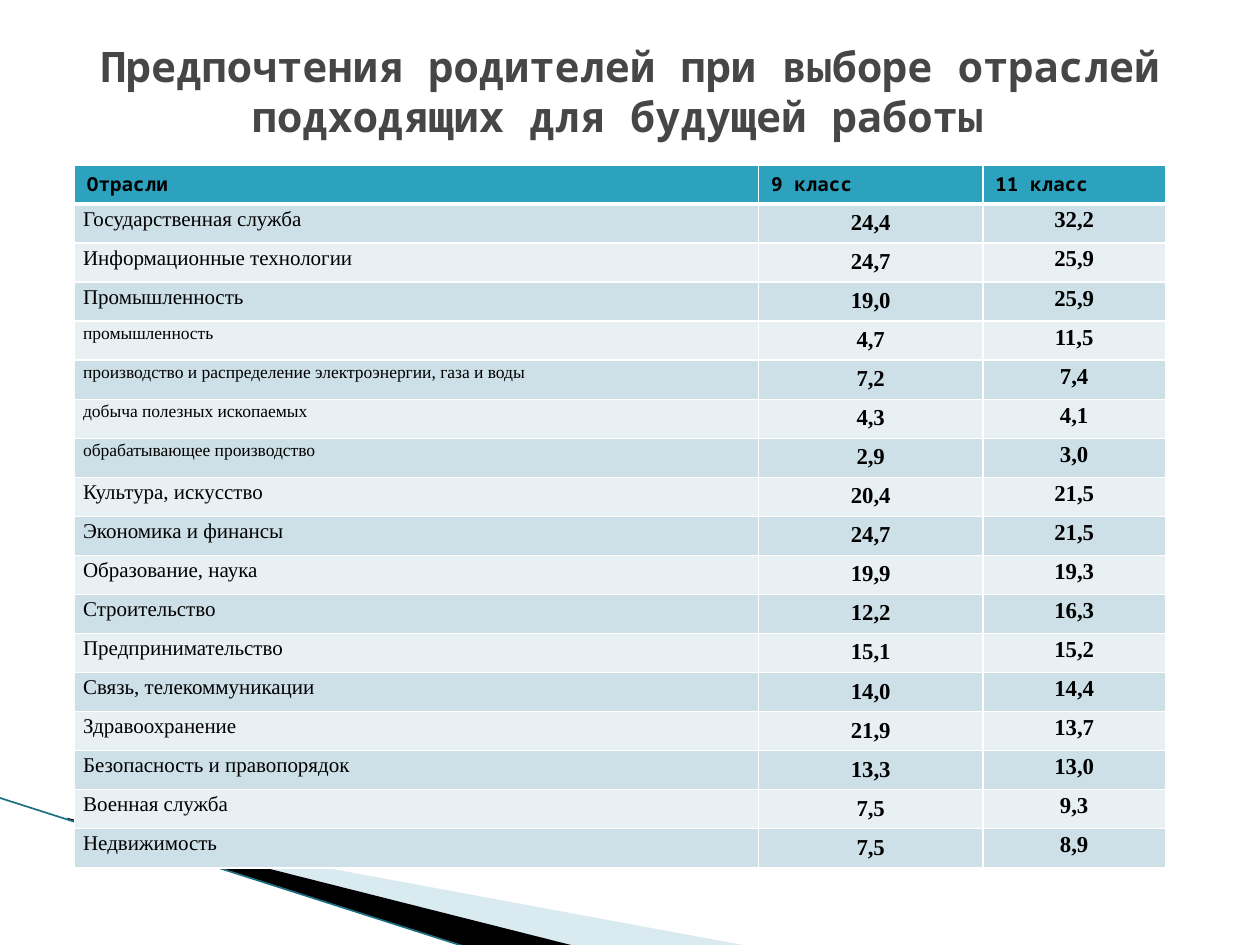
from lxml import etree
from pptx import Presentation
from pptx.dml.color import RGBColor
from pptx.enum.shapes import MSO_CONNECTOR
from pptx.enum.text import MSO_ANCHOR, PP_ALIGN
from pptx.oxml.ns import qn
from pptx.util import Inches, Pt

CENTER, JUSTIFY, LEFT = PP_ALIGN.CENTER, PP_ALIGN.JUSTIFY, PP_ALIGN.LEFT
MIDDLE = MSO_ANCHOR.MIDDLE
STRAIGHT = MSO_CONNECTOR.STRAIGHT

COLORS = {
    "title": "464646", "text": "000000", "header": "2DA2BF",
    "odd": "CDE0E8", "even": "E8F0F4", "border": "FFFFFF",
    "pale": "A0CBDC", "black": "000000", "line": "1B6F83",
}
MONO, SERIF = "Noto Sans Mono", "Times New Roman"

TITLE = "Предпочтения родителей при выборе отраслей подходящих для будущей работы "
HEADER = ("Отрасли", "9 класс", "11 класс")
ROWS = [
    ("Государственная служба", "24,4", "32,2"),
    ("Информационные технологии", "24,7", "25,9"),
    ("Промышленность", "19,0", "25,9"),
    ("промышленность", "4,7", "11,5"),
    ("производство и распределение электроэнергии, газа и воды", "7,2", "7,4"),
    ("добыча полезных ископаемых", "4,3", "4,1"),
    ("обрабатывающее производство", "2,9", "3,0"),
    ("Культура, искусство", "20,4", "21,5"),
    ("Экономика и финансы", "24,7", "21,5"),
    ("Образование, наука", "19,9", "19,3"),
    ("Строительство", "12,2", "16,3"),
    ("Предпринимательство", "15,1", "15,2"),
    ("Связь, телекоммуникации", "14,0", "14,4"),
    ("Здравоохранение", "21,9", "13,7"),
    ("Безопасность и правопорядок", "13,3", "13,0"),
    ("Военная служба", "7,5", "9,3"),
    ("Недвижимость", "7,5", "8,9"),
]
COL_WIDTHS = (5.43, 1.78, 1.45)
ROW_HEIGHT = 0.31

# Corner decoration: outline, colour, opacity in percent
WEDGES = [
    ([(0.55, 6.51), (5.95, 7.51), (4.56, 7.51), (0.55, 6.5)], "pale", 40),
    ([(0.53, 6.49), (4.57, 7.51), (3.72, 7.52), (0.54, 6.5)], "black", 100),
]


def rgb(name):
    return RGBColor.from_string(COLORS[name])


def add_wedge(slide, points, color, opacity):
    start, *rest = [(Inches(x), Inches(y)) for x, y in points]
    builder = slide.shapes.build_freeform(*start)
    builder.add_line_segments(rest)
    sp = builder.convert_to_shape()
    sp.shadow.inherit = False
    sp.line.fill.background()
    sp.fill.solid()
    sp.fill.fore_color.rgb = rgb(color)
    if opacity < 100:
        clr = sp.fill._xPr.find(".//" + qn("a:srgbClr"))
        etree.SubElement(clr, qn("a:alpha"), val=str(opacity * 1000))


def add_edge_line(slide):
    line = slide.shapes.add_connector(
        STRAIGHT, Inches(-0.01), Inches(6.33), Inches(3.71), Inches(7.52))
    line.line.color.rgb = rgb("line")
    line.line.width = Pt(0.95)
    etree.SubElement(line._element.spPr, qn("a:effectLst"))


def set_borders(cell, bottom):
    """White borders, 1 pt except for the bottom one."""
    tc_pr = cell._tc.get_or_add_tcPr()
    widths = {"lnL": 1, "lnR": 1, "lnT": 1, "lnB": bottom}
    for i, (tag, width) in enumerate(widths.items()):
        ln = etree.Element(qn("a:" + tag), w=str(Pt(width)))
        fill = etree.SubElement(ln, qn("a:solidFill"))
        etree.SubElement(fill, qn("a:srgbClr"), val=COLORS["border"])
        tc_pr.insert(i, ln)


def fill_cell(cell, text, fill, font, size, bold, align):
    cell.fill.solid()
    cell.fill.fore_color.rgb = rgb(fill)
    p = cell.text_frame.paragraphs[0]
    p.text = text
    p.alignment = align
    p.font.name, p.font.size, p.font.bold = font, Pt(size), bold
    p.font.color.rgb = rgb("text")


def tighten(cell):
    cell.margin_left = cell.margin_right = Inches(0.07)
    cell.margin_top = cell.margin_bottom = 0
    cell.text_frame.paragraphs[0].line_spacing = 1.15


def add_table(slide):
    count = len(ROWS) + 1
    table = slide.shapes.add_table(
        count, len(HEADER), Inches(0.59), Inches(1.31),
        Inches(sum(COL_WIDTHS)), Inches(ROW_HEIGHT * count)).table
    for column, width in zip(table.columns, COL_WIDTHS):
        column.width = Inches(width)
    for row in table.rows:
        row.height = Inches(ROW_HEIGHT)

    for c, text in enumerate(HEADER):
        cell = table.cell(0, c)
        fill_cell(cell, text, "header", MONO, 11, True, LEFT)
        set_borders(cell, 3)
    for r, values in enumerate(ROWS, 1):
        fill = "odd" if r % 2 else "even"
        name_size = 10 if values[0][0].islower() else 12
        for c, text in enumerate(values):
            cell = table.cell(r, c)
            if c == 0:
                fill_cell(cell, text, fill, SERIF, name_size, False, JUSTIFY)
            else:
                fill_cell(cell, text, fill, SERIF, 13, True, CENTER)
            if c != 1:
                tighten(cell)
            set_borders(cell, 1)


def add_title(slide):
    box = slide.shapes.add_textbox(Inches(0.5), Inches(0.21), Inches(9), Inches(1.02))
    tf = box.text_frame
    tf.word_wrap = True
    tf.vertical_anchor = MIDDLE
    p = tf.paragraphs[0]
    p.text = TITLE
    p.alignment = CENTER
    p.font.name, p.font.size, p.font.bold = MONO, Pt(24), True
    p.font.color.rgb = rgb("title")


def main():
    prs = Presentation()
    prs.slide_width, prs.slide_height = Inches(10), Inches(7.5)
    slide = prs.slides.add_slide(prs.slide_layouts[6])
    for wedge in WEDGES:
        add_wedge(slide, *wedge)
    add_edge_line(slide)
    add_table(slide)
    add_title(slide)
    prs.save("out.pptx")


if __name__ == "__main__":
    main()
